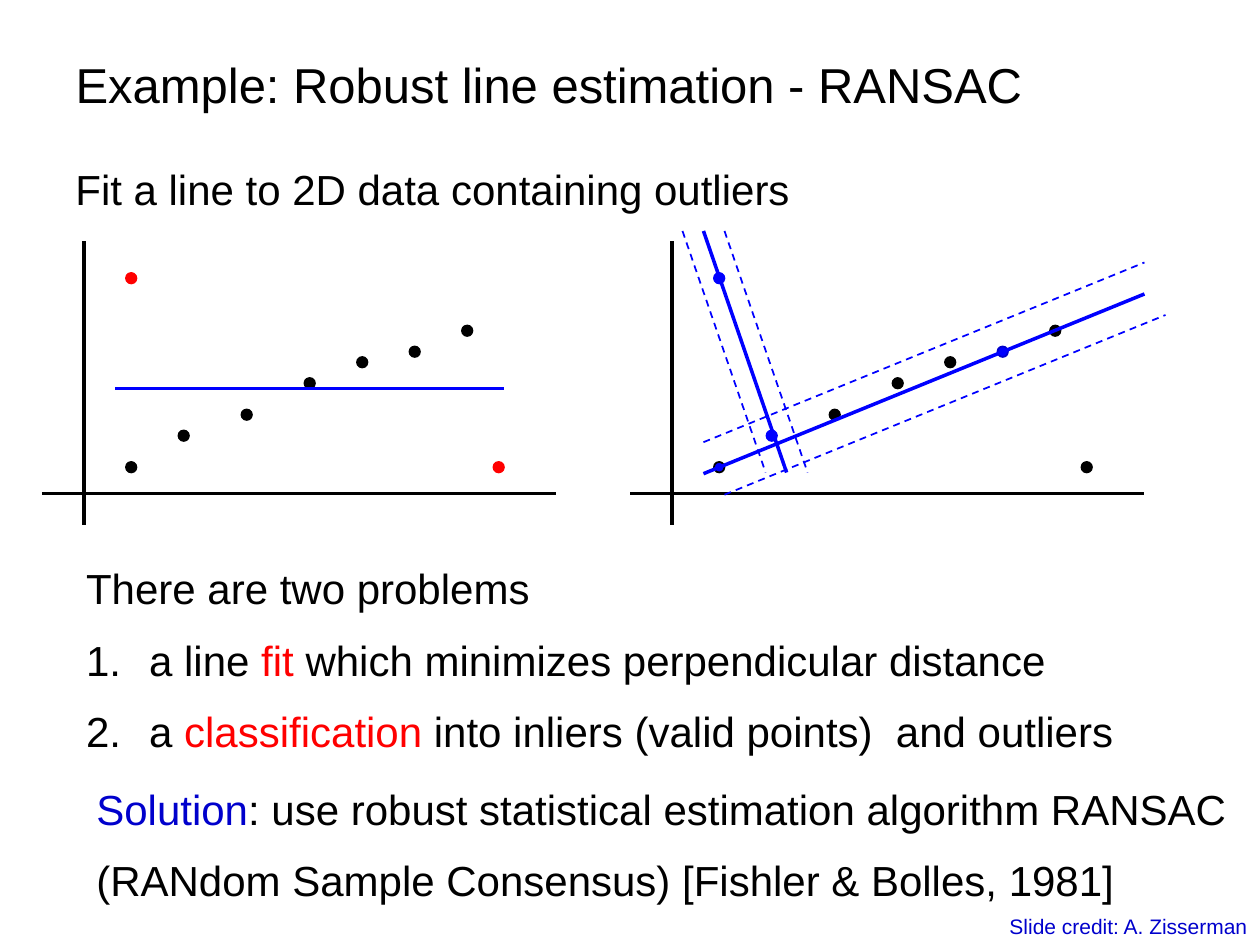
from dataclasses import dataclass
from pptx import Presentation
from pptx.dml.color import RGBColor
from pptx.enum.dml import MSO_LINE
from pptx.enum.shapes import MSO_CONNECTOR, MSO_SHAPE
from pptx.enum.text import MSO_ANCHOR, MSO_AUTO_SIZE, PP_ALIGN
from pptx.oxml.xmlchemy import OxmlElement
from pptx.util import Pt


@dataclass(frozen=True)
class Theme:
    font: str = "Arial"
    black: str = "000000"
    white: str = "FFFFFF"
    red: str = "FF0000"
    blue: str = "0000FF"
    navy: str = "0000CC"
    title: int = 28
    body: int = 24
    credit: int = 12


T = Theme()
PLOT_GAP = 336
DOT = 6
INLIERS = [(72, 264), (102, 246), (138, 234), (174, 216),
           (204, 204), (234, 198), (264, 186)]
OUTLIERS = [(72, 156), (282, 264)]
SAMPLES = {(234, 198): T.navy, (72, 264): T.black,
           (102, 246): T.blue, (72, 156): T.blue}


def rgb(color):
    return RGBColor.from_string(color)


def place(shape, left, top, width, height):
    shape.left, shape.top = Pt(left), Pt(top)
    shape.width, shape.height = Pt(width), Pt(height)


def set_bullet(p, tag, indent, **attrs):
    pPr = p._p.get_or_add_pPr()
    pPr.set("marL", str(Pt(indent)))
    pPr.set("indent", str(-Pt(indent)))
    bullet = OxmlElement(tag)
    for name, value in attrs.items():
        bullet.set(name, value)
    pPr.append(bullet)


def write(shape, paragraphs, size=T.body, color=T.black, align=PP_ALIGN.LEFT,
          anchor=MSO_ANCHOR.TOP, numbered=False):
    tf = shape.text_frame
    tf.word_wrap = True
    tf.auto_size = MSO_AUTO_SIZE.NONE
    tf.vertical_anchor = anchor
    tf.margin_left = tf.margin_right = Pt(7.2)
    tf.margin_top = tf.margin_bottom = Pt(3.6)
    for i, runs in enumerate(paragraphs):
        p = tf.add_paragraph() if i else tf.paragraphs[0]
        p.alignment = align
        p.space_before = Pt(size / 2 if i else 0)
        if numbered and i:
            set_bullet(p, "a:buAutoNum", 36, type="arabicPeriod")
        elif numbered:
            set_bullet(p, "a:buNone", 36)
        for text, run_color in runs:
            r = p.add_run()
            r.text = text
            r.font.name, r.font.size = T.font, Pt(size)
            r.font.color.rgb = rgb(run_color or color)


def add_text(s, box, paragraphs, fill=None, **fmt):
    sp = s.shapes.add_textbox(*map(Pt, box))
    if fill:
        sp.fill.solid()
        sp.fill.fore_color.rgb = rgb(fill)
    write(sp, paragraphs, **fmt)


def add_line(s, start, end, color=T.black, width=2.25, dashed=False):
    line = s.shapes.add_connector(MSO_CONNECTOR.STRAIGHT, *map(Pt, (*start, *end)))
    line._element.spPr.append(OxmlElement("a:effectLst"))
    line.line.color.rgb = rgb(color)
    line.line.width = Pt(width)
    if dashed:
        line.line.dash_style = MSO_LINE.DASH


def add_dot(s, x, y, fill, outline=None):
    dot = s.shapes.add_shape(MSO_SHAPE.OVAL, Pt(x), Pt(y), Pt(DOT), Pt(DOT))
    dot.shadow.inherit = False
    dot.fill.solid()
    dot.fill.fore_color.rgb = rgb(fill)
    dot.line.color.rgb = rgb(outline or fill)
    dot.line.width = Pt(1)


def add_axes(s, dx):
    add_line(s, (48 + dx, 138), (48 + dx, 300))
    add_line(s, (24 + dx, 282), (318 + dx, 282))


def add_band(s, start, end, offsets):
    add_line(s, start, end, T.blue, 2)
    for dx, dy in offsets:
        ends = [(x + dx, y + dy) for x, y in (start, end)]
        add_line(s, *ends, T.blue, 1, dashed=True)


def add_fit_plot(s):
    add_axes(s, 0)
    for points, color in ((INLIERS, T.black), (OUTLIERS, T.red)):
        for x, y in points:
            add_dot(s, x, y, color)
    add_line(s, (66, 222), (288, 222), T.blue)


def add_ransac_plot(s):
    add_axes(s, PLOT_GAP)
    for x, y in INLIERS + OUTLIERS:
        outline = SAMPLES.get((x, y))
        add_dot(s, x + PLOT_GAP, y, T.blue if outline else T.black, outline)
    add_band(s, (402, 132), (449.5, 270), [(12, 0), (-12, 0)])
    add_band(s, (402, 270.7), (654, 168), [(12, 12), (0, -18)])


def main():
    prs = Presentation()
    prs.slide_width, prs.slide_height = Pt(720), Pt(540)
    s = prs.slides.add_slide(prs.slide_layouts[1])
    title, body = s.placeholders

    place(title, 36, 12, 648, 72)
    write(title, [[("Example: Robust line estimation - RANSAC", None)]],
          size=T.title, anchor=MSO_ANCHOR.MIDDLE)
    add_text(s, (36, 90, 456, 36),
             [[("Fit a line to 2D data containing outliers", None)]])
    add_fit_plot(s)
    add_ransac_plot(s)
    place(body, 42, 318, 612, 122)
    write(body, [
        [("There are two problems", None)],
        [("a line ", None), ("fit ", T.red),
         ("which minimizes perpendicular distance", None)],
        [("a ", None), ("classification", T.red),
         (" into inliers (valid points)  and outliers", None)],
    ], numbered=True)
    add_text(s, (48, 444, 672, 79), [
        [("Solution", T.navy),
         (": use robust statistical estimation algorithm RANSAC", None)],
        [("(RANdom Sample Consensus) [Fishler & Bolles, 1981]", None)],
    ])
    add_text(s, (517, 518.4, 203, 21.6), [[("Slide credit: A. Zisserman", None)]],
             fill=T.white, size=T.credit, color=T.navy, align=PP_ALIGN.RIGHT)
    prs.save("out.pptx")


if __name__ == "__main__":
    main()
